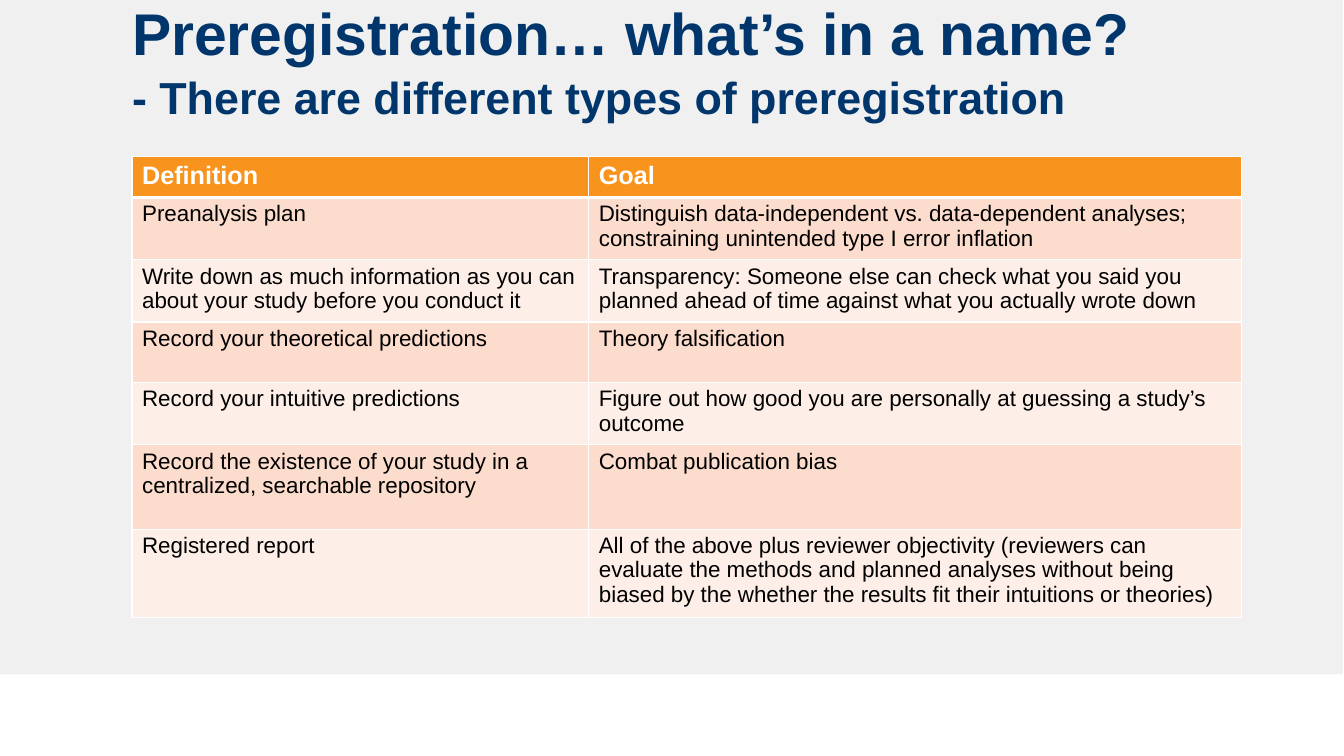
from pptx import Presentation
from pptx.dml.color import RGBColor
from pptx.enum.shapes import MSO_SHAPE
from pptx.enum.text import MSO_ANCHOR
from pptx.oxml import parse_xml
from pptx.oxml.ns import nsdecls
from pptx.util import Inches, Pt

RECT = MSO_SHAPE.RECTANGLE
BOTTOM = MSO_ANCHOR.BOTTOM
FONT = "Arial"
COLORS = {
    "panel": "F0F0F0", "title": "00366C", "header": "F8931D", "odd": "FCDCCD",
    "even": "FEEEE8", "white": "FFFFFF", "text": "000000",
}
ROWS = [
    ("Definition", "Goal"),
    ("Preanalysis plan",
     "Distinguish data-independent vs. data-dependent analyses; "
     "constraining unintended type I error inflation"),
    ("Write down as much information as you can about your study before you conduct it",
     "Transparency: Someone else can check what you said you planned ahead of time "
     "against what you actually wrote down"),
    ("Record your theoretical predictions", "Theory falsification"),
    ("Record your intuitive predictions",
     "Figure out how good you are personally at guessing a study’s outcome"),
    ("Record the existence of your study in a centralized, searchable repository",
     "Combat publication bias"),
    ("Registered report",
     "All of the above plus reviewer objectivity (reviewers can evaluate the methods "
     "and planned analyses without being biased by the whether the results fit their "
     "intuitions or theories)"),
]
COL_WIDTHS = [4.53, 6.47]
ROW_HEIGHTS = [0.41] + [0.6] * 4 + [0.84] * 2


def rgb(name):
    """Return the named colour."""
    return RGBColor.from_string(COLORS[name])


def add_text(p, text, size=16, color="text", bold=False):
    """Add a formatted run to a paragraph."""
    r = p.add_run()
    r.text = text
    r.font.name = FONT
    r.font.size = Pt(size)
    r.font.bold = bold
    r.font.color.rgb = rgb(color)


def set_borders(cell, bottom):
    """Give a cell white borders, with its own bottom width in points."""
    tcPr = cell._tc.get_or_add_tcPr()
    for i, (side, width) in enumerate(zip("LRTB", (1, 1, 1, bottom))):
        tcPr.insert(i, parse_xml(
            f'<a:ln{side} {nsdecls("a")} w="{Pt(width)}"><a:solidFill>'
            f'<a:srgbClr val="{COLORS["white"]}"/></a:solidFill></a:ln{side}>'))


def add_panel(s, x, y, w, h):
    """Draw the grey backdrop."""
    sp = s.shapes.add_shape(RECT, Inches(x), Inches(y), Inches(w), Inches(h))
    sp.shadow.inherit = False
    sp.fill.solid()
    sp.fill.fore_color.rgb = rgb("panel")
    sp.line.fill.background()


def add_title(s, x, y, w, h):
    """Write the title and subtitle, resting on the bottom of the box."""
    tf = s.shapes.add_textbox(Inches(x), Inches(y), Inches(w), Inches(h)).text_frame
    tf.word_wrap = True
    tf.vertical_anchor = BOTTOM
    tf.margin_left = tf.margin_right = tf.margin_top = tf.margin_bottom = 0
    p = tf.paragraphs[0]
    add_text(p, "Preregistration… what’s in a name?", size=42, color="title", bold=True)
    p = tf.add_paragraph()
    p.line_spacing = 1.05
    add_text(p, "- There are different types of preregistration",
             size=32, color="title", bold=True)


def add_types_table(s, x, y, w, h):
    """Build the table of preregistration types and goals."""
    table = s.shapes.add_table(len(ROWS), len(COL_WIDTHS), Inches(x), Inches(y),
                               Inches(w), Inches(h)).table
    for column, width in zip(table.columns, COL_WIDTHS):
        column.width = Inches(width)
    for i, (row, height) in enumerate(zip(ROWS, ROW_HEIGHTS)):
        table.rows[i].height = Inches(height)
        header = i == 0
        fill = "header" if header else "odd" if i % 2 else "even"
        for j, text in enumerate(row):
            cell = table.cell(i, j)
            cell.fill.solid()
            cell.fill.fore_color.rgb = rgb(fill)
            set_borders(cell, bottom=3 if header else 1)
            p = cell.text_frame.paragraphs[0]
            if header:
                add_text(p, text, size=18, color="white", bold=True)
            else:
                p.line_spacing = 0.97
                add_text(p, text)


def main():
    """Build and save the slide."""
    prs = Presentation()
    prs.slide_width, prs.slide_height = Inches(13.33), Inches(7.5)
    s = prs.slides.add_slide(prs.slide_layouts[6])
    add_panel(s, 0, 0, 13.32, 6.69)
    add_title(s, 1.31, 0.5, 11, 0.73)
    add_types_table(s, 1.31, 1.55, sum(COL_WIDTHS), sum(ROW_HEIGHTS))
    prs.save("out.pptx")


if __name__ == "__main__":
    main()
